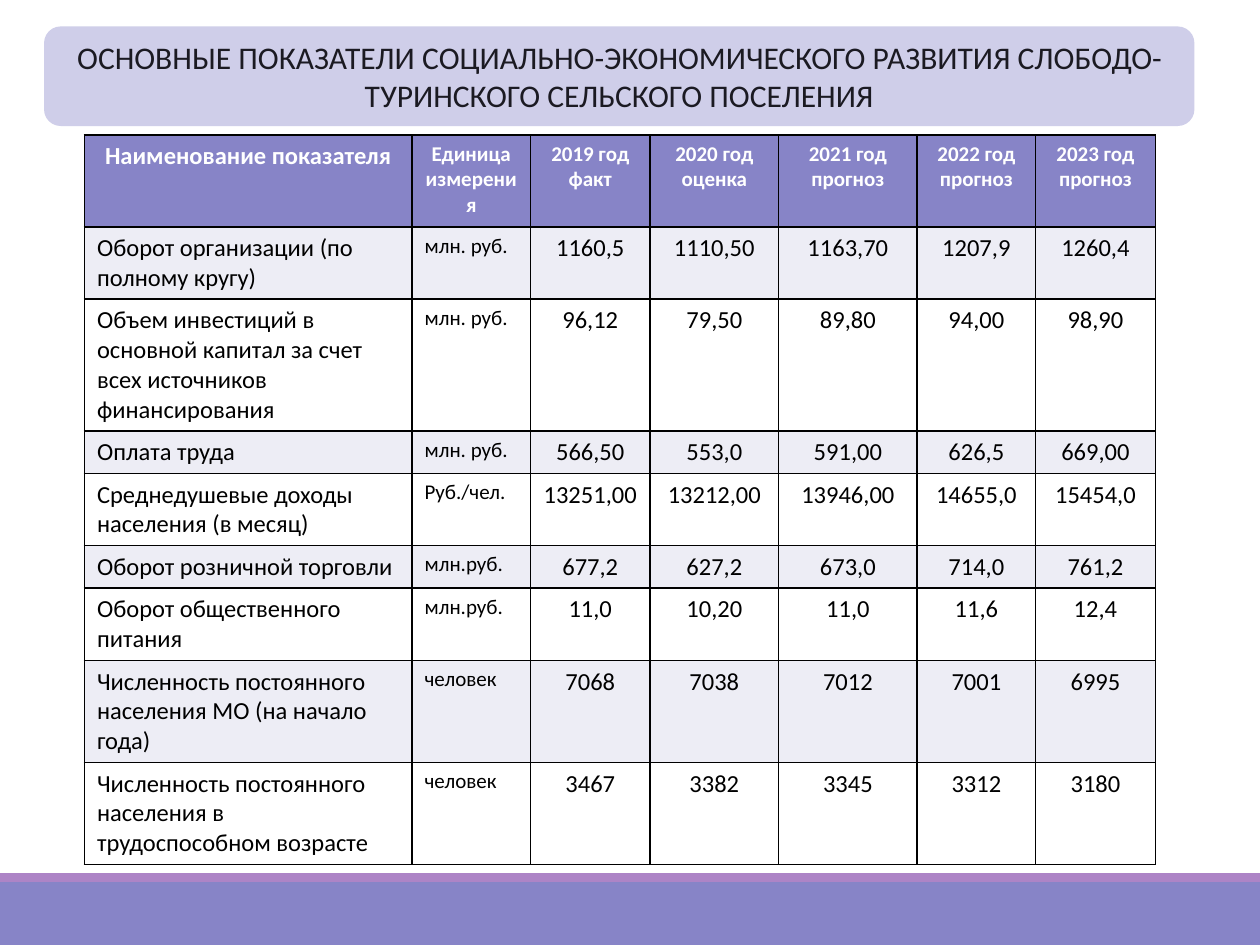
"""Build a slide with a table of socio-economic indicators of a rural settlement."""
from pptx import Presentation
from pptx.dml.color import RGBColor
from pptx.enum.shapes import MSO_SHAPE
from pptx.enum.text import MSO_ANCHOR, MSO_AUTO_SIZE, PP_ALIGN
from pptx.oxml import parse_xml
from pptx.oxml.ns import nsdecls
from pptx.util import Inches, Pt

RECT, ROUNDED = MSO_SHAPE.RECTANGLE, MSO_SHAPE.ROUNDED_RECTANGLE
MIDDLE = MSO_ANCHOR.MIDDLE
NO_FIT = MSO_AUTO_SIZE.NONE
LEFT, CENTER = PP_ALIGN.LEFT, PP_ALIGN.CENTER

VIOLET = RGBColor(0x87, 0x84, 0xC7)
MAUVE = RGBColor(0xAD, 0x84, 0xC6)
LILAC = RGBColor(0xCF, 0xCE, 0xE9)
INK = RGBColor(0x1B, 0x1A, 0x22)
BAND = RGBColor(0xED, 0xED, 0xF5)
WHITE = RGBColor(0xFF, 0xFF, 0xFF)
BLACK = RGBColor(0x00, 0x00, 0x00)

TITLE = ("ОСНОВНЫЕ ПОКАЗАТЕЛИ СОЦИАЛЬНО-ЭКОНОМИЧЕСКОГО РАЗВИТИЯ "
         "СЛОБОДО-ТУРИНСКОГО СЕЛЬСКОГО ПОСЕЛЕНИЯ")
HEADER = ["Наименование показателя", "Единица измерения", "2019 год факт", "2020 год оценка",
          "2021 год прогноз", "2022 год прогноз", "2023 год\nпрогноз"]
INDICATORS = [
    ["Оборот организации (по полному кругу)", "млн. руб.",
     "1160,5", "1110,50", "1163,70", "1207,9", "1260,4"],
    ["Объем инвестиций в основной капитал за счет всех источников финансирования", "млн. руб.",
     "96,12", "79,50", "89,80", "94,00", "98,90"],
    ["Оплата труда", "млн. руб.", "566,50", "553,0", "591,00", "626,5", "669,00"],
    ["Среднедушевые доходы населения (в месяц)", "Руб./чел.",
     "13251,00", "13212,00", "13946,00", "14655,0", "15454,0"],
    ["Оборот розничной торговли", "млн.руб.", "677,2", "627,2", "673,0", "714,0", "761,2"],
    ["Оборот общественного питания", "млн.руб.", "11,0", "10,20", "11,0", "11,6", "12,4"],
    ["Численность постоянного населения МО (на начало года)", "человек",
     "7068", "7038", "7012", "7001", "6995"],
    ["Численность постоянного населения в трудоспособном возрасте", "человек",
     "3467", "3382", "3345", "3312", "3180"],
]
COL_WIDTHS = [2.6, 0.94, 0.95, 1.02, 1.1, 0.94, 0.95]
ROW_HEIGHTS = [0.73, 0.54, 0.99, 0.32, 0.54, 0.32, 0.54, 0.76, 0.76]
TITLE_BOX = (0.35, 0.21, 9.13, 0.79)
TABLE_BOX = (0.67, 1.07, sum(COL_WIDTHS), sum(ROW_HEIGHTS))
PANELS = [
    (RECT, (0, 7, 10, 0.5), VIOLET),
    (RECT, (0, 6.93, 10, 0.07), MAUVE),
    (ROUNDED, TITLE_BOX, LILAC),
]


def box(lengths):
    return [Inches(n) for n in lengths]


def paint(target, color):
    target.fill.solid()
    target.fill.fore_color.rgb = color


def write(tf, text, align, color, **font):
    tf.text = text
    for p in tf.paragraphs:
        p.alignment = align
        for r in p.runs:
            r.font.color.rgb = color
            for name, value in {"name": "Calibri", **font}.items():
                setattr(r.font, name, value)


def add_borders(cell):
    tcPr = cell._tc.get_or_add_tcPr()
    for i, side in enumerate(("lnL", "lnR", "lnT", "lnB")):
        tcPr.insert(i, parse_xml(
            f'<a:{side} {nsdecls("a")} w="{Pt(1)}"><a:solidFill>'
            f'<a:srgbClr val="{BLACK}"/></a:solidFill></a:{side}>'))


def add_panels(slide):
    for shape, lengths, color in PANELS:
        sp = slide.shapes.add_shape(shape, *box(lengths))
        sp.shadow.inherit = False
        paint(sp, color)
        sp.line.fill.background()


def add_title(slide):
    sp = slide.shapes.title
    slide.shapes._spTree.append(sp._element)
    sp.left, sp.top, sp.width, sp.height = box(TITLE_BOX)
    tf = sp.text_frame
    for name, value in {"word_wrap": True, "auto_size": NO_FIT,
                        "vertical_anchor": MIDDLE}.items():
        setattr(tf, name, value)
    write(tf, TITLE, CENTER, INK, size=Pt(18))


def add_indicators(slide):
    rows = [HEADER] + INDICATORS
    table = slide.shapes.add_table(len(rows), len(HEADER), *box(TABLE_BOX)).table
    for column, width in zip(table.columns, COL_WIDTHS):
        column.width = Inches(width)
    for r, (row, height) in enumerate(zip(rows, ROW_HEIGHTS)):
        table.rows[r].height = Inches(height)
        head = r == 0
        for c, text in enumerate(row):
            cell = table.cell(r, c)
            small = c > 0 if head else c == 1
            write(cell.text_frame, text, CENTER if head or c > 1 else LEFT,
                  WHITE if head else BLACK, size=Pt(12 if small else 14), bold=head)
            paint(cell, VIOLET if head else BAND if r % 2 else WHITE)
            add_borders(cell)


def main():
    prs = Presentation()
    prs.slide_width, prs.slide_height = Inches(10), Inches(7.5)
    slide = prs.slides.add_slide(prs.slide_layouts[5])
    add_panels(slide)
    add_title(slide)
    add_indicators(slide)
    prs.save("out.pptx")


if __name__ == "__main__":
    main()
